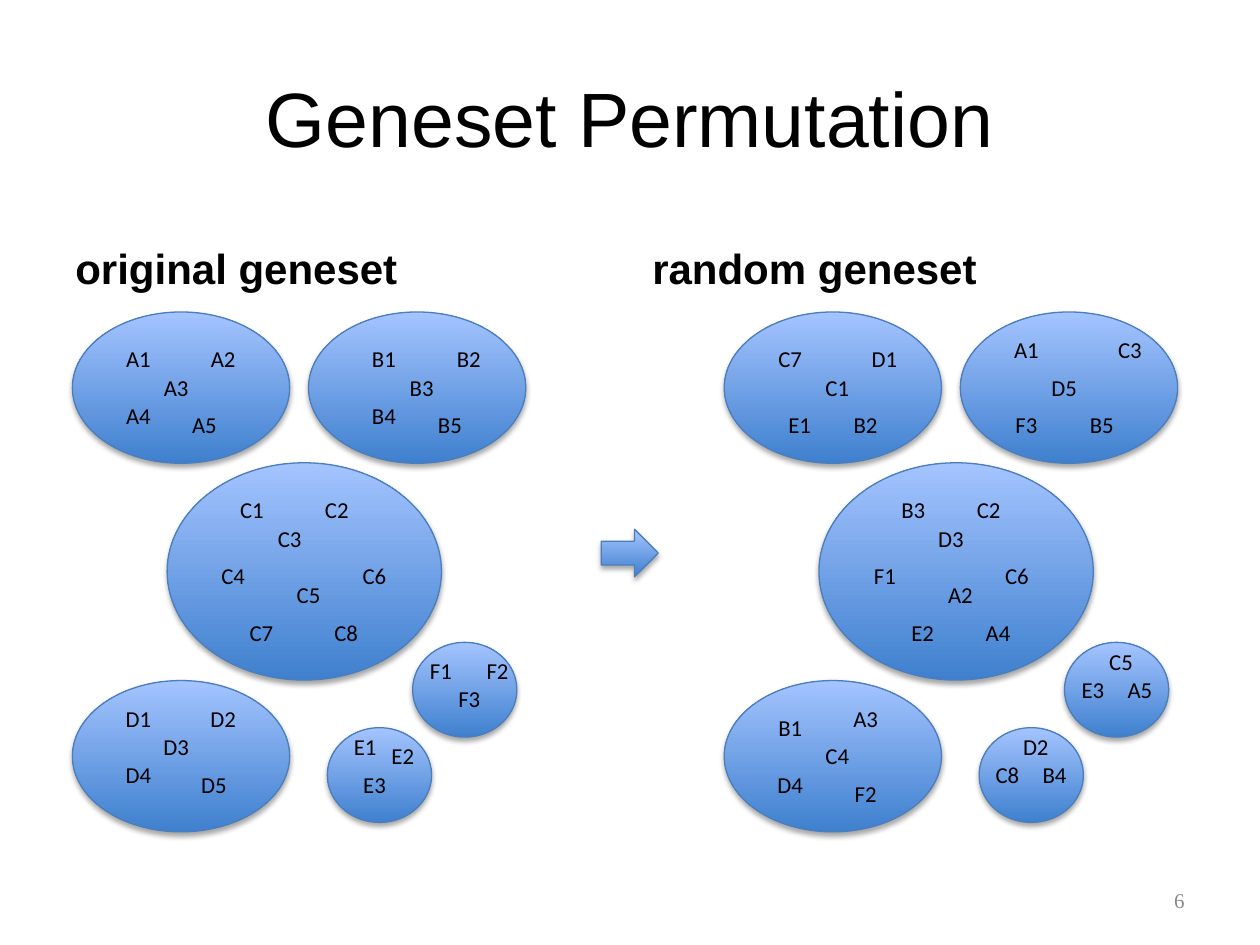
from pptx import Presentation
from pptx.dml.color import RGBColor
from pptx.enum.shapes import MSO_SHAPE
from pptx.enum.text import MSO_ANCHOR, MSO_AUTO_SIZE, PP_ALIGN
from pptx.oxml import parse_xml
from pptx.oxml.ns import nsdecls, qn
from pptx.util import Cm, Pt

OVAL, ARROW = MSO_SHAPE.OVAL, MSO_SHAPE.RIGHT_ARROW
LEFT, CENTER, RIGHT = PP_ALIGN.LEFT, PP_ALIGN.CENTER, PP_ALIGN.RIGHT
TOP, MIDDLE, BOTTOM = MSO_ANCHOR.TOP, MSO_ANCHOR.MIDDLE, MSO_ANCHOR.BOTTOM

# Theme: text styles are (font, size, colour, bold)
THEME = {
    "title": ("Arial", 44, "000000", False),
    "heading": ("Arial", 24, "000000", True),
    "gene": ("Calibri", 13, "000000", False),
    "page": ("Times New Roman", 12, "898989", False),
    "gradient": ("3F80CE", "A4C4FF"),
    "line": "4B7EBC",
    "shadow": "000000",
}

# Content: text, box (cm), style, alignment, anchor
TEXTS = [
    ("Geneset Permutation", (1.27, 0.76, 22.86, 3.18), "title", CENTER, MIDDLE),
    ("original geneset", (1.27, 4.26, 11.22, 1.78), "heading", LEFT, BOTTOM),
    ("random geneset", (12.9, 4.26, 11.23, 1.78), "heading", LEFT, BOTTOM),
    ("6", (18.2, 17.65, 5.93, 1.01), "page", RIGHT, MIDDLE),
]

# Geneset ovals of the first panel (cm), from back to front
SMALL, MEDIUM, LARGE = (2.1, 1.91), (4.38, 3.05), (5.53, 4.38)
SETS = {
    "E": (6.6, 14.67, *SMALL),
    "A": (1.46, 6.29, *MEDIUM),
    "B": (6.22, 6.29, *MEDIUM),
    "C": (3.37, 9.33, *LARGE),
    "D": (1.46, 13.72, *MEDIUM),
    "F": (8.32, 12.95, *SMALL),
}

# Genes in each oval: name, column and row in grid steps from the oval's corner
ORIGINAL = {
    "A": [("A1", 5, 3), ("A2", 14, 3), ("A3", 9, 6), ("A4", 5, 9), ("A5", 12, 10)],
    "B": [("B1", 6, 3), ("B2", 15, 3), ("B3", 10, 6), ("B4", 6, 9), ("B5", 13, 10)],
    "C": [("C1", 7, 3), ("C2", 16, 3), ("C3", 11, 6), ("C4", 5, 10),
          ("C5", 13, 12), ("C6", 20, 10), ("C7", 8, 16), ("C8", 17, 16)],
    "D": [("D1", 5, 2), ("D2", 14, 2), ("D3", 9, 5), ("D4", 5, 8), ("D5", 13, 9)],
    "E": [("E1", 2, 0), ("E2", 6, 1), ("E3", 3, 4)],
    "F": [("F1", 1, 1), ("F2", 7, 1), ("F3", 4, 4)],
}
RANDOM = {
    "A": [("C7", 5, 3), ("D1", 15, 3), ("C1", 10, 6), ("E1", 6, 10), ("B2", 13, 10)],
    "B": [("A1", 5, 2), ("C3", 16, 2), ("D5", 9, 6), ("F3", 5, 10), ("B5", 13, 10)],
    "C": [("B3", 8, 3), ("C2", 16, 3), ("D3", 12, 6), ("F1", 5, 10),
          ("A2", 13, 12), ("C6", 19, 10), ("E2", 9, 16), ("A4", 17, 16)],
    "D": [("B1", 5, 3), ("A3", 13, 2), ("C4", 10, 6), ("D4", 5, 9), ("F2", 13, 10)],
    "E": [("D2", 4, 0), ("C8", 1, 3), ("B4", 6, 3)],
    "F": [("C5", 4, 0), ("E3", 1, 3), ("A5", 6, 3)],
}
PANELS = [ORIGINAL, RANDOM]
PANEL_STEP = 13.14
GRID = 0.19
GENE_W, GENE_H, GENE_INSET = 0.76, 0.74, 0.1
ARROW_BOX = (12.12, 10.67, 1.15, 0.96)


def add_text(s, text, box, style, align, anchor, inset=None):
    tb = s.shapes.add_textbox(*map(Cm, box))
    tf = tb.text_frame
    tf.word_wrap = True
    tf.vertical_anchor = anchor
    if inset is not None:
        tf.margin_left = tf.margin_right = Cm(inset)
        tf.margin_top = tf.margin_bottom = Cm(inset)
        tf.auto_size = MSO_AUTO_SIZE.SHAPE_TO_FIT_TEXT
    p = tf.paragraphs[0]
    p.alignment = align
    r = p.add_run()
    r.text = text
    font, size, color, bold = THEME[style]
    r.font.name, r.font.size, r.font.bold = font, Pt(size), bold
    r.font.color.rgb = RGBColor.from_string(color)


def add_glossy(s, kind, box):
    sp = s.shapes.add_shape(kind, *map(Cm, box))
    sp.fill.gradient()
    sp.fill.gradient_angle = 90
    for i, (stop, color) in enumerate(zip(sp.fill.gradient_stops, THEME["gradient"])):
        stop.position = i
        stop.color.rgb = RGBColor.from_string(color)
    sp.line.color.rgb = RGBColor.from_string(THEME["line"])
    sp.line.width = Pt(0.75)
    # Soft shadow straight below
    sp.shadow.inherit = False
    sp._element.spPr.find(qn("a:effectLst")).append(parse_xml(
        f'<a:outerShdw {nsdecls("a")} blurRad="{Pt(3.1)}" dist="{Pt(1.8)}" '
        f'dir="5400000" rotWithShape="0"><a:srgbClr val="{THEME["shadow"]}">'
        '<a:alpha val="35000"/></a:srgbClr></a:outerShdw>'))


def add_panel(s, genes, dx):
    for x, y, w, h in SETS.values():
        add_glossy(s, OVAL, (x + dx, y, w, h))
    for name, (x, y, _, _) in SETS.items():
        for gene, col, row in genes[name]:
            box = (x + dx + col * GRID, y + row * GRID, GENE_W, GENE_H)
            add_text(s, gene, box, "gene", CENTER, TOP, GENE_INSET)


def main():
    prs = Presentation()
    prs.slide_width, prs.slide_height = Cm(25.4), Cm(19.05)
    s = prs.slides.add_slide(prs.slide_layouts[6])

    # Title, headings and page number
    for item in TEXTS:
        add_text(s, *item)

    # Original and random genesets
    for i, genes in enumerate(PANELS):
        add_panel(s, genes, i * PANEL_STEP)

    # Arrow between the panels
    add_glossy(s, ARROW, ARROW_BOX)
    prs.save("out.pptx")


if __name__ == "__main__":
    main()
